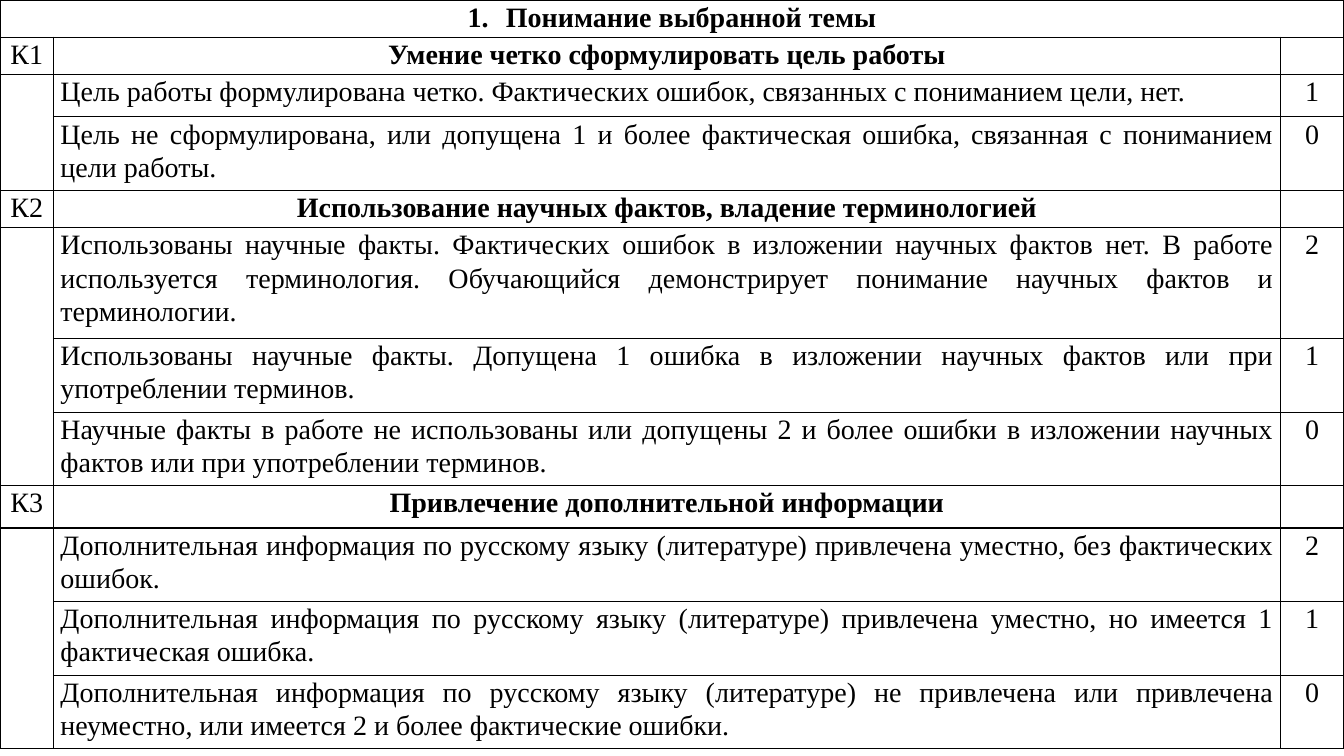
"""Build a slide with a table of marking criteria."""
from lxml import etree
from pptx import Presentation
from pptx.dml.color import RGBColor
from pptx.enum.text import PP_ALIGN
from pptx.oxml.ns import qn
from pptx.util import Inches, Pt

CENTER, JUSTIFY = PP_ALIGN.CENTER, PP_ALIGN.JUSTIFY
COLORS = {"text": "000000", "line": "000000"}
FONT = "Times New Roman"
WIDTHS = [0.53, 12.17, 0.63]
TITLE = "Понимание выбранной темы"
TITLE_HEIGHT = 0.37
GROUPS = [
    ("К1", "Умение четко сформулировать цель работы", 0.37, [
        ("Цель работы формулирована четко. Фактических ошибок, связанных с "
         "пониманием цели, нет.", "1", 0.42),
        ("Цель не сформулирована, или допущена 1 и более фактическая ошибка, "
         "связанная с пониманием цели работы.", "0", 0.73),
    ]),
    ("К2", "Использование научных фактов, владение терминологией", 0.37, [
        ("Использованы научные факты. Фактических ошибок в изложении научных "
         "фактов нет. В работе используется терминология. Обучающийся "
         "демонстрирует понимание научных фактов и терминологии.", "2", 1.1),
        ("Использованы научные факты. Допущена 1 ошибка в изложении научных "
         "фактов или при употреблении терминов.", "1", 0.73),
        ("Научные факты в работе не использованы или допущены 2 и более ошибки "
         "в изложении научных фактов или при употреблении терминов.", "0", 0.73),
    ]),
    ("К3", "Привлечение дополнительной информации", 0.42, [
        ("Дополнительная информация по русскому языку (литературе) привлечена "
         "уместно, без фактических ошибок.", "2", 0.73),
        ("Дополнительная информация по русскому языку (литературе) привлечена "
         "уместно, но имеется 1 фактическая ошибка.", "1", 0.73),
        ("Дополнительная информация по русскому языку (литературе) не привлечена "
         "или привлечена неуместно, или имеется 2 и более фактические ошибки.",
         "0", 0.73),
    ]),
]


def write(cell, text, align=CENTER, bold=False, number=False):
    """Put formatted text into a cell."""
    para = cell.text_frame.paragraphs[0]
    para.alignment = align
    para.line_spacing = 1.07
    if number:
        props = para._p.get_or_add_pPr()
        props.set("marL", str(Inches(0.38)))
        props.set("indent", str(Inches(-0.38)))
        etree.SubElement(props, qn("a:buAutoNum"), type="arabicPeriod")
    run = para.add_run()
    run.text = text
    font = run.font
    font.name, font.size, font.bold = FONT, Pt(20), bold
    font.color.rgb = RGBColor.from_string(COLORS["text"])


def style(cell):
    """Give a cell its margins, borders and empty fill."""
    cell.margin_left = cell.margin_right = Inches(0.07)
    cell.margin_top = cell.margin_bottom = 0
    props = cell._tc.get_or_add_tcPr()
    for side in ("lnL", "lnR", "lnT", "lnB"):
        line = etree.SubElement(props, qn(f"a:{side}"), w=str(Pt(1)))
        fill = etree.SubElement(line, qn("a:solidFill"))
        etree.SubElement(fill, qn("a:srgbClr"), val=COLORS["line"])
    cell.fill.background()


def add_grid(slide, heights):
    """Add a bordered table with the given row heights."""
    frame = slide.shapes.add_table(len(heights), len(WIDTHS), 0, 0,
                                   Inches(sum(WIDTHS)), Inches(sum(heights)))
    table = frame.table
    table.first_row = table.horz_banding = False
    for col, width in zip(table.columns, WIDTHS):
        col.width = Inches(width)
    for row, height in zip(table.rows, heights):
        row.height = Inches(height)
    for cell in table.iter_cells():
        style(cell)
    return table


def add_group(table, top, code, name, marks):
    """Fill one criterion and return the next free row."""
    write(table.cell(top, 0), code)
    write(table.cell(top, 1), name, bold=True)
    last = top + len(marks)
    table.cell(top + 1, 0).merge(table.cell(last, 0))
    for row, (text, score, _) in enumerate(marks, top + 1):
        write(table.cell(row, 1), text, align=JUSTIFY)
        write(table.cell(row, 2), score)
    return last + 1


def main():
    """Build and save the slide."""
    deck = Presentation()
    deck.slide_width, deck.slide_height = Inches(13.33), Inches(7.5)
    slide = deck.slides.add_slide(deck.slide_layouts[6])
    heights = [TITLE_HEIGHT]
    for _, _, height, marks in GROUPS:
        heights += [height] + [mark[2] for mark in marks]
    table = add_grid(slide, heights)
    table.cell(0, 0).merge(table.cell(0, 2))
    write(table.cell(0, 0), TITLE, bold=True, number=True)
    row = 1
    for code, name, _, marks in GROUPS:
        row = add_group(table, row, code, name, marks)
    deck.save("out.pptx")


if __name__ == "__main__":
    main()
